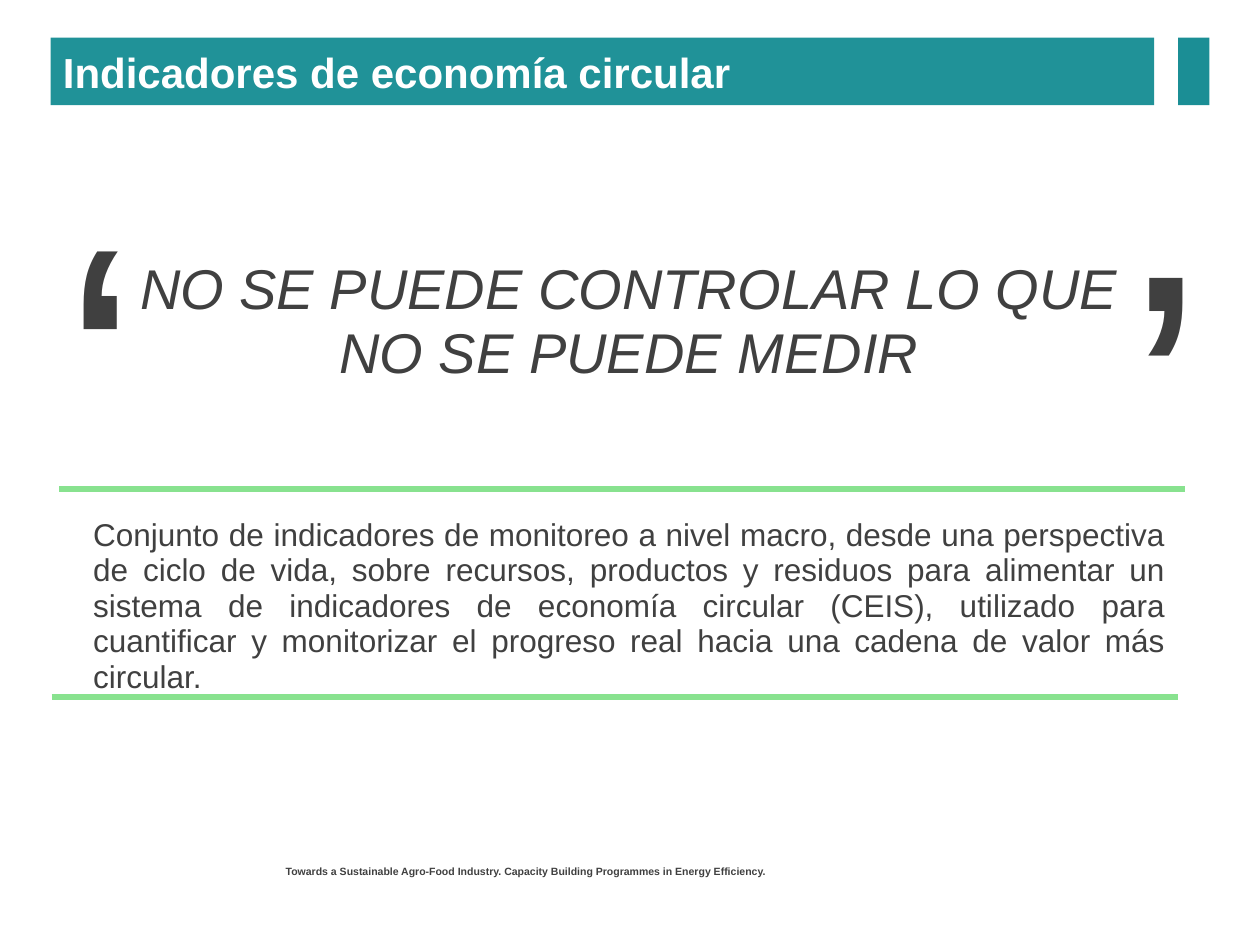
import pptx
import pptx.util
import pptx.dml.color
import pptx.enum.shapes
import pptx.enum.text
import lxml.etree

Cm = pptx.util.Cm
Pt = pptx.util.Pt
Align = pptx.enum.text.PP_ALIGN
Anchor = pptx.enum.text.MSO_ANCHOR

COLORS = {
    "text": "404040",
    "white": "FFFFFF",
    "band": "209298",
    "tab": "1B8E95",
    "rule": "88E28F",
}
MOTTO = "NO SE PUEDE CONTROLAR LO QUE NO SE PUEDE MEDIR"
BODY = (
    "Conjunto de indicadores de monitoreo a nivel macro, desde una perspectiva "
    "de ciclo de vida, sobre recursos, productos y residuos para alimentar un "
    "sistema de indicadores de economía circular (CEIS), utilizado para "
    "cuantificar y monitorizar el progreso real hacia una cadena de valor más "
    "circular."
)
FOOTER = (
    "Towards a Sustainable Agro-Food Industry. "
    "Capacity Building Programmes in Energy Efficiency."
)


def color(name):
    return pptx.dml.color.RGBColor.from_string(COLORS[name])


def style(para, text, size, tone="text", bold=False, italic=False, align=Align.LEFT):
    para.text = text
    para.alignment = align
    font = para.font
    font.name = "Arial"
    font.size = Pt(size)
    font.bold = bold
    font.italic = italic
    font.color.rgb = color(tone)


def add_box(slide, left, top, width, height):
    box = slide.shapes.add_textbox(Cm(left), Cm(top), Cm(width), Cm(height))
    box.text_frame.word_wrap = True
    return box


def add_bar(slide, left, width, tone):
    bar = slide.shapes.add_shape(
        pptx.enum.shapes.MSO_SHAPE.RECTANGLE, Cm(left), Cm(0.76), Cm(width), Cm(1.36)
    )
    bar.shadow.inherit = False
    bar.fill.solid()
    bar.fill.fore_color.rgb = color(tone)
    bar.line.fill.background()
    return bar


def add_quote(slide, left, top, angle=0):
    box = add_box(slide, left, top, 2.08, 8.76)
    box.rotation = angle
    box.text_frame.word_wrap = False
    box.text_frame.auto_size = pptx.enum.text.MSO_AUTO_SIZE.SHAPE_TO_FIT_TEXT
    style(box.text_frame.paragraphs[0], "‘", 199)


def add_rule(slide, left, top):
    rule = slide.shapes.add_connector(
        pptx.enum.shapes.MSO_CONNECTOR.STRAIGHT,
        Cm(left), Cm(top), Cm(left + 22.7), Cm(top),
    )
    rule.line.color.rgb = color("rule")
    rule.line.width = Pt(3)
    lxml.etree.SubElement(
        rule._element.spPr, pptx.oxml.ns.qn("a:effectLst")
    )


def add_body(slide):
    frame = add_box(slide, 1.7, 5.13, 21.97, 10.26).text_frame
    frame.margin_left = frame.margin_right = Cm(0.18)
    frame.margin_top = frame.margin_bottom = Cm(0.1)
    motto = frame.paragraphs[0]
    style(motto, MOTTO, 32, italic=True, align=Align.CENTER)
    body = frame.add_paragraph()
    style(body, BODY, 18, align=Align.JUSTIFY)
    body.space_before = Pt(75.5)
    for para in (motto, body):
        para.line_spacing = 0.94


def main():
    deck = pptx.Presentation()
    deck.slide_width = Cm(25.4)
    deck.slide_height = Cm(19.05)
    slide = deck.slides.add_slide(deck.slide_layouts[6])

    footer = add_box(slide, 5.51, 17.32, 13.97, 0.53)
    style(footer.text_frame.paragraphs[0], FOOTER, 6, bold=True)
    add_body(slide)

    title = add_bar(slide, 1.02, 22.25, "band").text_frame
    title.word_wrap = True
    title.vertical_anchor = Anchor.MIDDLE
    style(title.paragraphs[0], "Indicadores de economía circular", 24, "white", bold=True)
    add_bar(slide, 23.75, 0.63, "tab")

    add_quote(slide, 1.02, 2.77)
    add_quote(slide, 22.45, 0.74, 180)
    add_rule(slide, 1.19, 9.86)
    add_rule(slide, 1.04, 14.05)
    deck.save("out.pptx")


if __name__ == "__main__":
    main()
